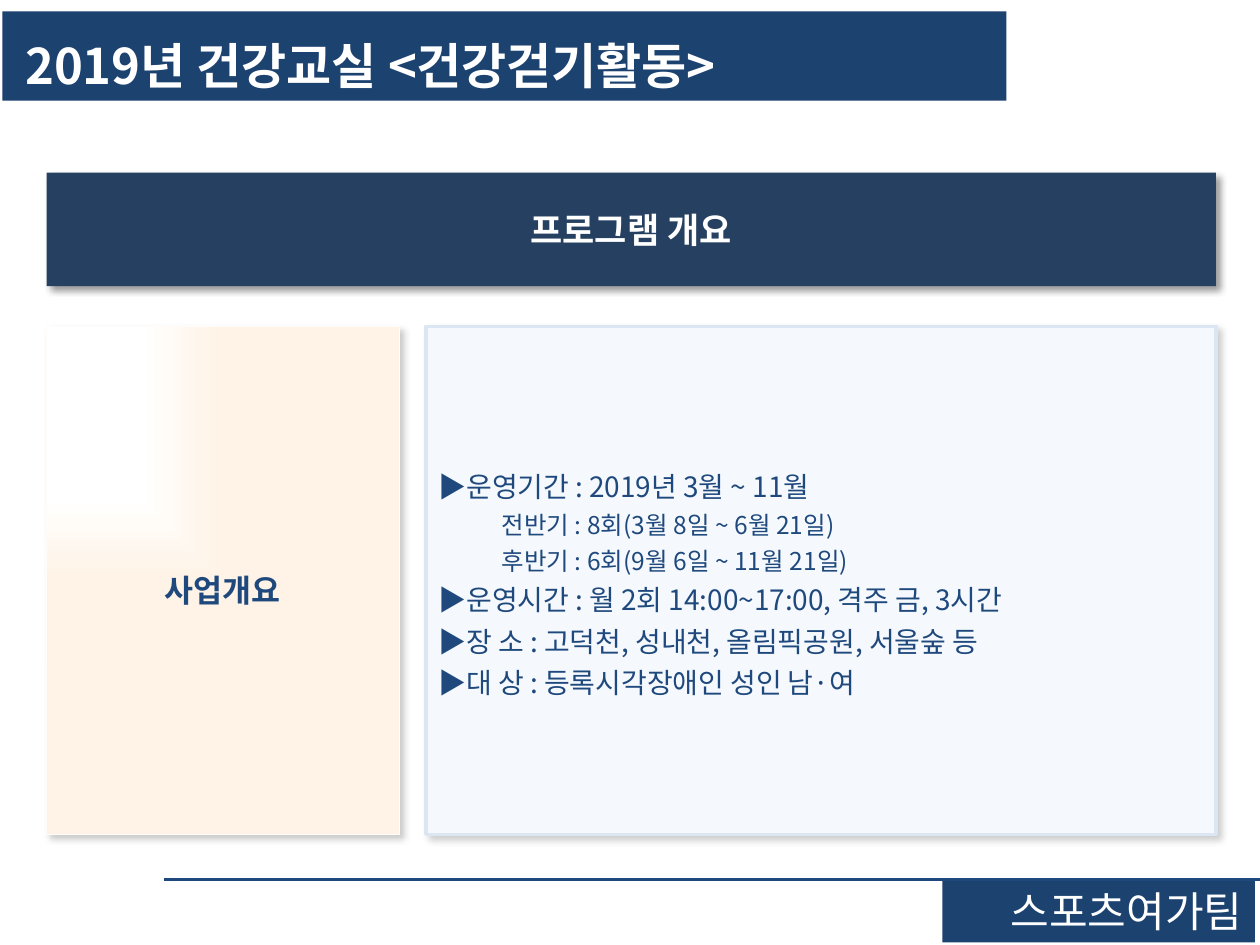
from lxml import etree
from pptx import Presentation
from pptx.dml.color import RGBColor
from pptx.enum.shapes import MSO_CONNECTOR, MSO_SHAPE
from pptx.enum.text import MSO_ANCHOR, PP_ALIGN
from pptx.oxml import parse_xml
from pptx.oxml.ns import qn
from pptx.util import Cm, Pt

RECT = MSO_SHAPE.RECTANGLE
LEFT, CENTER, RIGHT = PP_ALIGN.LEFT, PP_ALIGN.CENTER, PP_ALIGN.RIGHT
MIDDLE = MSO_ANCHOR.MIDDLE
FONT = "Noto Sans CJK KR"
NAVY, BAR, WHITE = "1F497D", "1C4270", "FFFFFF"
NS = 'xmlns:a="http://schemas.openxmlformats.org/drawingml/2006/main"'


def rgb(value):
    return RGBColor.from_string(value)


def add_text(p, text, size, color, bold=False):
    """Add a run whose Latin and Korean letters share one font."""
    r = p.add_run()
    r.text = text
    formats = {"name": FONT, "size": Pt(size), "bold": bold}
    for key, value in formats.items():
        setattr(r.font, key, value)
    r.font.color.rgb = rgb(color)
    ea = etree.SubElement(r.font._element, qn("a:ea"))
    ea.set("typeface", FONT)


prs = Presentation()
prs.slide_width, prs.slide_height = Cm(25.4), Cm(19.05)
slide = prs.slides.add_slide(prs.slide_layouts[6])
panels = slide.shapes.add_group_shape().shapes

# Boxes from back to front: body, label, heading, title, footer
body_lines = [
    ("▶운영기간 : 2019년 3월 ~ 11월", 1),
    ("전반기 : 8회(3월 8일 ~ 6월 21일)", 2),
    ("후반기 : 6회(9월 6일 ~ 11월 21일)", 2),
    ("▶운영시간 : 월 2회 14:00~17:00, 격주 금, 3시간", 1),
    ("▶장 소 : 고덕천, 성내천, 올림픽공원, 서울숲 등", 1),
    ("▶대 상 : 등록시각장애인 성인 남·여", 1),
]
boxes = [
    {"at": (8.59, 6.58, 15.93, 10.24), "fill": "F5F9FD", "line": ("DCE6F2", 2),
     "shadow": 20, "lines": body_lines, "color": NAVY, "spacing": 1.23},
    {"at": (0.94, 6.58, 7.11, 10.24), "line": ("FFFCFA", 0.5), "shadow": 20,
     "lines": [("사업개요", 0)], "size": 18, "color": NAVY, "bold": True,
     "align": CENTER, "spacing": 1.5},
    {"at": (0.94, 3.48, 23.57, 2.29), "fill": "254061", "shadow": 40,
     "lines": [("프로그램 개요", 0)], "size": 20, "bold": True, "align": CENTER},
    {"at": (0.05, 0.23, 20.24, 1.8), "fill": BAR, "inset": 0.46,
     "lines": [("2019년 건강교실 <건강걷기활동>", 0)], "size": 28, "bold": True,
     "spacing": 1.3},
    {"at": (19, 17.73, 6.3, 1.27), "fill": BAR,
     "lines": [("스포츠여가팀", 0)], "size": 24, "align": RIGHT},
]
level_sizes = {1: 16, 2: 14}

for box in boxes:
    parent = panels if "shadow" in box else slide.shapes
    s = parent.add_shape(RECT, *[Cm(v) for v in box["at"]])
    s.shadow.inherit = False
    if "line" in box:
        color, width = box["line"]
        s.line.color.rgb = rgb(color)
        s.line.width = Pt(width)
    else:
        s.line.fill.background()
    if "fill" in box:
        s.fill.solid()
        s.fill.fore_color.rgb = rgb(box["fill"])
    else:
        # White glow spreading from the top left corner
        s._element.spPr.find(qn("a:prstGeom")).addnext(parse_xml(
            f'<a:gradFill {NS} rotWithShape="1"><a:gsLst>'
            '<a:gs pos="53000"><a:srgbClr val="FFFFFF"/></a:gs>'
            '<a:gs pos="100000"><a:srgbClr val="FEF3E6"/></a:gs></a:gsLst>'
            '<a:path path="rect"><a:fillToRect r="100000" b="100000"/></a:path>'
            '</a:gradFill>'))
    if "shadow" in box:
        s._element.spPr.find(qn("a:effectLst")).append(parse_xml(
            f'<a:outerShdw {NS} blurRad="{Pt(4)}" dist="{Pt(3)}" dir="2700000" '
            'algn="tl" rotWithShape="0"><a:srgbClr val="000000">'
            f'<a:alpha val="{box["shadow"] * 1000}"/></a:srgbClr></a:outerShdw>'))

    tf = s.text_frame
    tf.word_wrap = True
    tf.vertical_anchor = MIDDLE
    tf.margin_left = Cm(box.get("inset", 0.25))
    for i, (text, level) in enumerate(box["lines"]):
        p = tf.add_paragraph() if i else tf.paragraphs[0]
        p.alignment = box.get("align", LEFT)
        p.line_spacing = box.get("spacing", 1.0)
        if level:
            p.level = level
            pPr = p._p.get_or_add_pPr()
            pPr.set("marL", str(Cm(1.27 * level)))
            pPr.set("indent", str(-Cm(1.27)))
        size = box.get("size") or level_sizes[level]
        add_text(p, text, size, box.get("color", WHITE), box.get("bold", False))

# Footer rule
rule = slide.shapes.add_connector(
    MSO_CONNECTOR.STRAIGHT, Cm(25.4), Cm(17.73), Cm(3.3), Cm(17.73))
rule.line.color.rgb = rgb(NAVY)
rule.line.width = Pt(1.5)
etree.SubElement(rule._element.spPr, qn("a:effectLst"))

prs.save("out.pptx")
